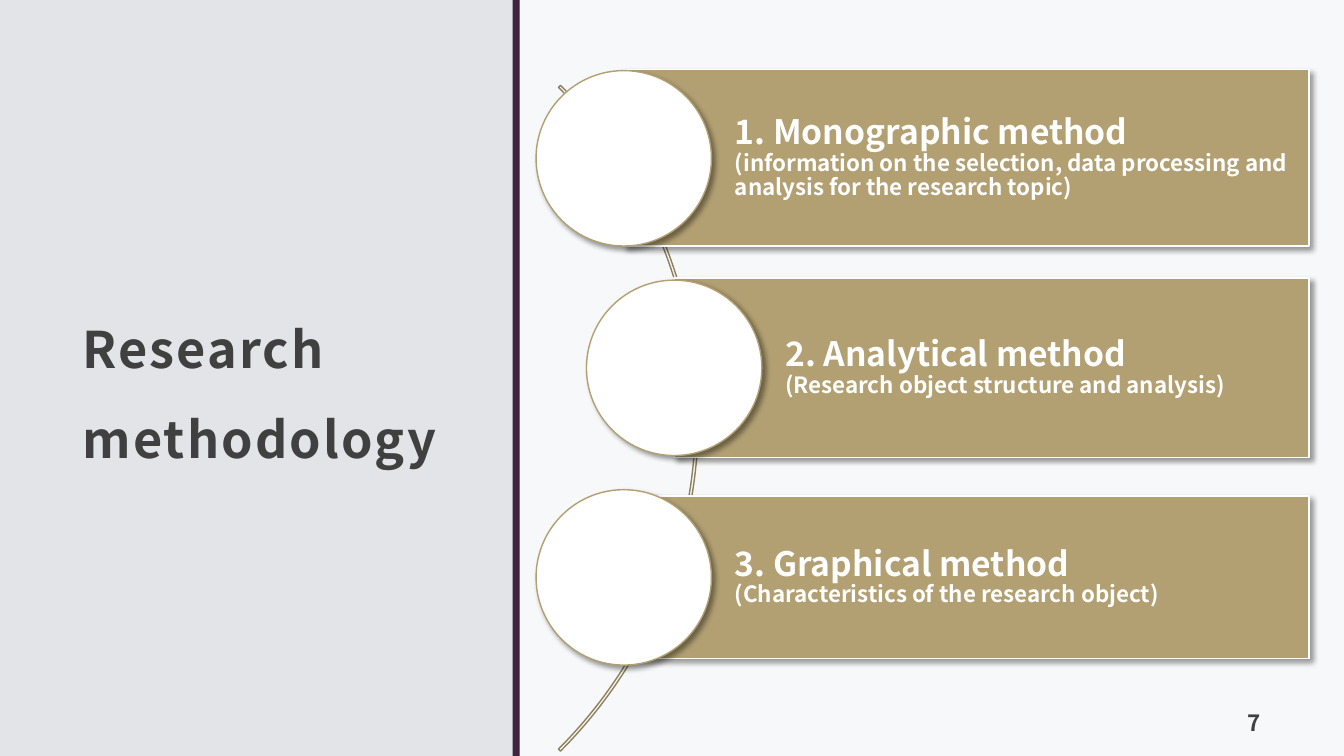
import pptx
import pptx.util
import pptx.dml.color
import pptx.enum.shapes
import pptx.enum.text
import pptx.oxml
import pptx.oxml.ns
from pptx.util import Cm, Pt

RGB = pptx.dml.color.RGBColor
SHAPE = pptx.enum.shapes.MSO_SHAPE
ALIGN = pptx.enum.text.PP_ALIGN
ANCHOR = pptx.enum.text.MSO_ANCHOR

WHITE = RGB(0xFF, 0xFF, 0xFF)
GREY = RGB(0xE2, 0xE4, 0xE8)
PLUM = RGB(0x41, 0x24, 0x3F)
DARK = RGB(0x40, 0x40, 0x40)
GOLD = RGB(0xB2, 0xA0, 0x72)
BROWN = RGB(0x8F, 0x80, 0x5B)
FONT = "Noto Sans CJK JP"

NS = pptx.oxml.ns.nsdecls("a")
SHADOW = (
    f'<a:effectLst {NS}><a:outerShdw blurRad="50800" dist="38100" dir="2700000" '
    'algn="tl" rotWithShape="0"><a:srgbClr val="000000"><a:alpha val="40000"/>'
    "</a:srgbClr></a:outerShdw></a:effectLst>"
)


class Deck:
    """Holds the style and the current slide."""

    def __init__(self):
        self.prs = pptx.Presentation()
        self.prs.slide_width, self.prs.slide_height = Cm(33.87), Cm(19.05)
        self.slide = self.prs.slides.add_slide(self.prs.slide_layouts[5])
        fill = self.slide.background.fill
        fill.solid()
        fill.fore_color.rgb = GREY

    def shape(self, kind, box, fill=None, line=None, shadow=False):
        item = self.slide.shapes.add_shape(kind, *map(Cm, box))
        if fill is None:
            item.fill.background()
        else:
            item.fill.solid()
            item.fill.fore_color.rgb = fill
        if line is None:
            item.line.fill.background()
        else:
            item.line.color.rgb = line
            item.line.width = Pt(1)
        if shadow:
            item._element.spPr.append(pptx.oxml.parse_xml(SHADOW))
        else:
            item.shadow.inherit = False
        return item

    def fade(self, item, share):
        tint = item._element.spPr.find(".//" + pptx.oxml.ns.qn("a:srgbClr"))
        tint.append(pptx.oxml.parse_xml(f'<a:alpha {NS} val="{share * 1000}"/>'))

    def frame(self, item, pads, anchor):
        text = item.text_frame
        text.word_wrap = True
        text.auto_size = pptx.enum.text.MSO_AUTO_SIZE.NONE
        text.vertical_anchor = anchor
        text.margin_left, text.margin_top, text.margin_right, text.margin_bottom = map(Cm, pads)
        return text.paragraphs[0]

    def style(self, para, color, align, size=None):
        para.alignment = align
        para.font.name = FONT
        para.font.bold = True
        para.font.color.rgb = color
        if size:
            para.font.size = Pt(size)

    def label(self, item, words, size, align, anchor):
        """Dark, widely spaced text for the title and the page number."""
        para = self.frame(item, (0.3, 0.3, 0.3, 0.25), anchor)
        run = para.add_run()
        run.text = words
        run._r.get_or_add_rPr().set("spc", "150")
        self.style(para, DARK, align, size)
        return para

    def title(self, box, words):
        item = self.slide.shapes.title
        item.left, item.top, item.width, item.height = map(Cm, box)
        self.label(item, words, 36, ALIGN.LEFT, ANCHOR.MIDDLE).line_spacing = 1.5

    def page(self, box, words):
        item = self.slide.shapes.add_textbox(*map(Cm, box))
        self.label(item, words, 16, ALIGN.RIGHT, ANCHOR.BOTTOM)

    def card(self, box, head, note):
        item = self.shape(SHAPE.RECTANGLE, box, GOLD, WHITE, True)
        para = self.frame(item, (2.8, 0.18, 0.18, 0.18), ANCHOR.MIDDLE)
        para.line_spacing = 0.9
        self.style(para, WHITE, ALIGN.LEFT)
        first = para.add_run()
        first.text = head
        first.font.size = Pt(24)
        para.add_line_break()
        second = para.add_run()
        second.text = note
        second.font.size = Pt(16)


def main():
    deck = Deck()

    # Pale panel, dividing bar and title
    panel = deck.shape(SHAPE.RECTANGLE, (13.1, 0, 20.77, 19.05), WHITE)
    deck.fade(panel, 75)
    deck.shape(SHAPE.RECTANGLE, (12.92, 0, 0.18, 19.05), PLUM)
    deck.title((1.78, 1.96, 10.31, 15.09), "Research methodology")

    # Thin arc behind the cards
    arc = deck.shape(SHAPE.BLOCK_ARC, (-6.12, -1.32, 23.72, 23.72), line=BROWN)
    for i, value in enumerate((189, 27, 0.003)):
        arc.adjustments[i] = value

    # Method cards, each with a circle centred on its left edge
    right, disc, step = 32.99, 4.42, 5.28
    cards = (
        (15.72, 1.75, 4.45, "1. Monographic method",
         "(information on the selection, data processing and analysis for the research topic)"),
        (16.99, 7.01, 4.52, "2. Analytical method",
         "(Research object structure and analysis)"),
        (15.72, 12.5, 4.09, "3. Graphical method",
         "(Characteristics of the research object)"),
    )
    for i, (left, top, high, head, note) in enumerate(cards):
        deck.card((left, top, right - left, high), head, note)
        ring = (left - disc / 2, 1.78 + i * step, disc, disc)
        deck.shape(SHAPE.OVAL, ring, WHITE, GOLD, True)

    # Page number
    deck.page((29.36, 17.53, 2.72, 1.27), "7")
    deck.prs.save("out.pptx")


if __name__ == "__main__":
    main()
